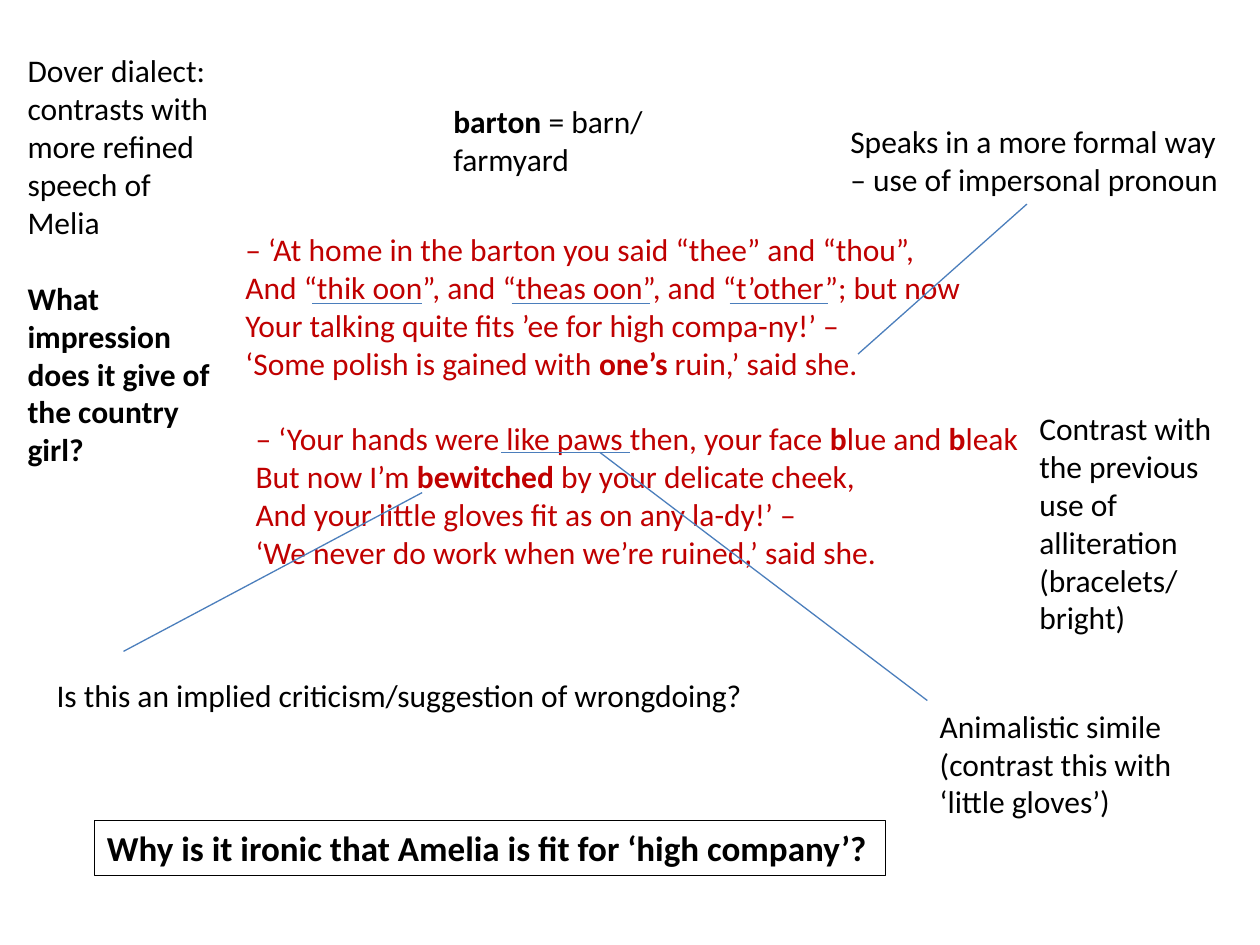
"""Build an annotated poem slide with notes and pointer lines."""
from pptx import Presentation
from pptx.dml.color import RGBColor
from pptx.enum.shapes import MSO_CONNECTOR
from pptx.enum.text import MSO_AUTO_SIZE
from pptx.oxml.ns import qn
from pptx.util import Inches, Pt
from lxml import etree

STRAIGHT = MSO_CONNECTOR.STRAIGHT
FIT_SHAPE = MSO_AUTO_SIZE.SHAPE_TO_FIT_TEXT
BLACK, RED, BLUE = "000000", "C00000", "4B7EBC"


def rgb(value):
    return RGBColor.from_string(value)


def add_text(s, box, lines, color=BLACK, size=18, wrap=True):
    """Add a text box; words between asterisks are bold."""
    sp = s.shapes.add_textbox(*[Inches(v) for v in box])
    tf = sp.text_frame
    tf.word_wrap = wrap
    tf.auto_size = FIT_SHAPE
    for i, line in enumerate(lines):
        p = tf.add_paragraph() if i else tf.paragraphs[0]
        p.font.name = "Calibri"
        p.font.size = Pt(size)
        p.font.color.rgb = rgb(color)
        for j, part in enumerate(line.split("*")):
            if part:
                r = p.add_run()
                r.text = part
                r.font.bold = j % 2 == 1
    return sp


prs = Presentation()
prs.slide_width, prs.slide_height = Inches(10), Inches(7.5)
s = prs.slides.add_slide(prs.slide_layouts[6])

stanzas = [
    ((1.85, 1.78, 5.96, 1.31), [
        "– ‘At home in the barton you said “thee” and “thou”,",
        "And “thik oon”, and “theas oon”, and “t’other”; but now",
        "Your talking quite ﬁts ’ee for high compa-ny!’ –",
        "‘Some polish is gained with *one’s* ruin,’ said she."]),
    ((1.93, 3.28, 6.3, 1.31), [
        "– ‘Your hands were like paws then, your face *b*lue and *b*leak",
        "But now I’m *bewitched* by your delicate cheek,",
        "And your little gloves ﬁt as on any la-dy!’ –",
        "‘We never do work when we’re ruined,’ said she."]),
]
for box, lines in stanzas:
    add_text(s, box, lines, RED)

dialect = add_text(s, (0.12, 0.36, 1.65, 3.43), [
    "Dover dialect: contrasts with more refined speech of Melia",
    "*What impression does it give of the country girl?*"])
dialect.text_frame.paragraphs[1].space_before = Pt(22)

notes = [
    ((8.15, 3.2, 1.73, 1.92),
     ["Contrast with the previous use of alliteration (bracelets/ bright)"]),
    ((7.36, 5.56, 2.52, 1.01),
     ["Animalistic simile (contrast this with ‘little gloves’)"]),
    ((6.65, 0.92, 3.35, 0.71),
     ["Speaks in a more formal way", "– use of impersonal pronoun"]),
    ((3.5, 0.76, 1.97, 0.71), ["*barton* = barn/ farmyard"]),
]
for box, lines in notes:
    add_text(s, box, lines)

add_text(s, (0.35, 5.32, 5.71, 0.4),
         ["Is this an implied criticism/suggestion of wrongdoing?"], wrap=False)
question = add_text(s, (0.75, 6.51, 6.28, 0.44),
                    ["*Why is it ironic that Amelia is fit for ‘high company’?*"],
                    size=20, wrap=False)
question.line.color.rgb = rgb(BLACK)
question.line.width = Pt(0.75)

underlines = [(2.48, 3.35, 2.41), (4.06, 5.16, 2.41), (5.79, 6.57, 2.41),
              (3.98, 5, 3.59)]
pointers = [(3.35, 3.91, 0.98, 5.17), (4.76, 3.59, 7.36, 5.56),
            (6.81, 2.81, 8.15, 1.62)]
for ends in [(x1, y, x2, y) for x1, x2, y in underlines] + pointers:
    line = s.shapes.add_connector(STRAIGHT, *[Inches(v) for v in ends])
    line.line.color.rgb = rgb(BLUE)
    line.line.width = Pt(0.75)
    etree.SubElement(line._element.spPr, qn("a:effectLst"))

prs.save("out.pptx")
